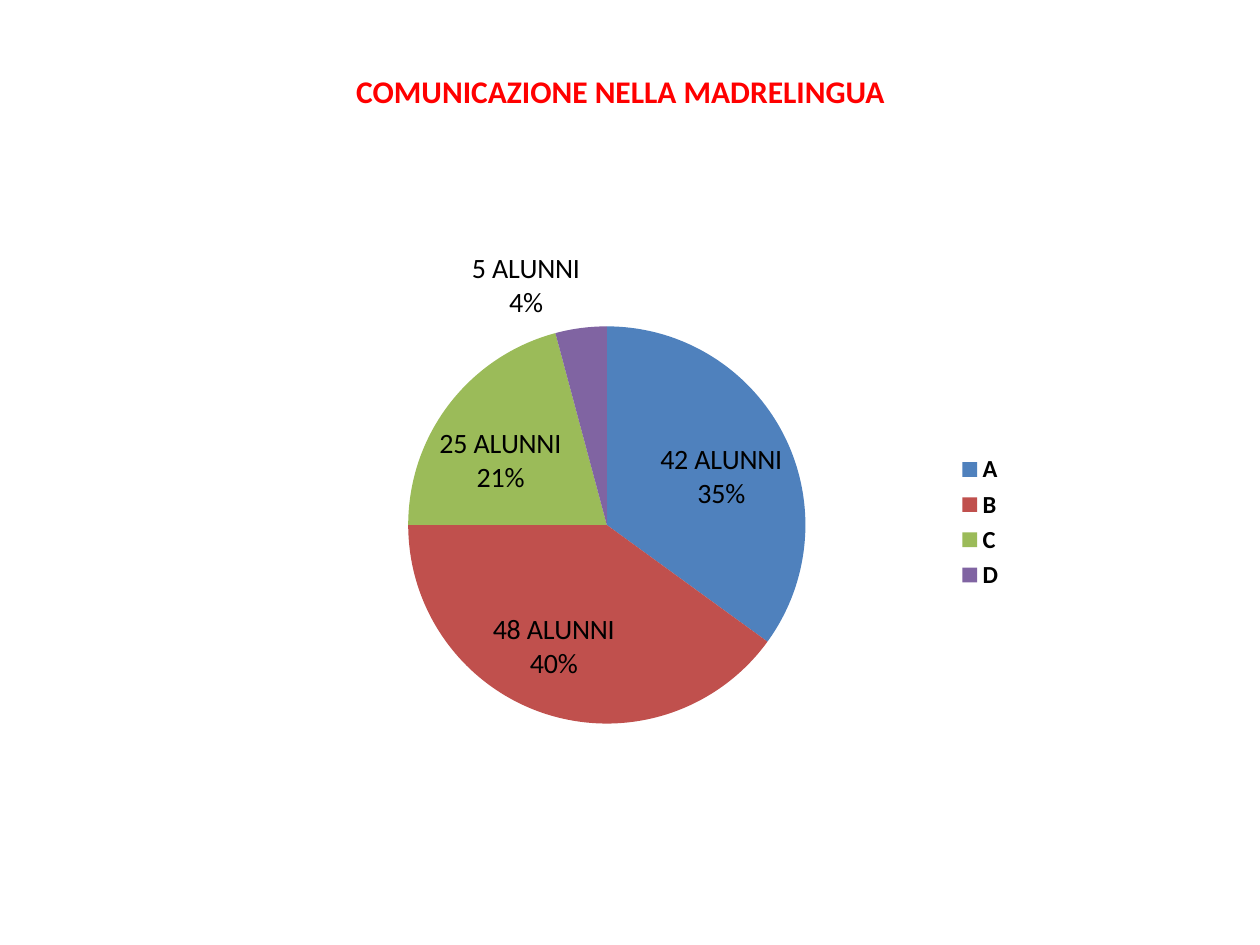
from lxml.etree import SubElement
from pptx import Presentation
from pptx.chart.data import CategoryChartData
from pptx.dml.color import RGBColor
from pptx.enum.chart import XL_CHART_TYPE, XL_LABEL_POSITION, XL_LEGEND_POSITION
from pptx.enum.text import MSO_ANCHOR, PP_ALIGN
from pptx.oxml.ns import qn
from pptx.util import Inches, Pt

COLORS = {"heading": "FF0000", "text": "000000",
          "A": "4F81BD", "B": "C0504D", "C": "9BBB59", "D": "8064A2"}
PUPILS = {"A": 42, "B": 48, "C": 25, "D": 5}
PIE_AREA = {"x": 0.24, "y": 0.16, "w": 0.5, "h": 0.69}


def style_font(font, size, color="text", bold=False):
    font.name, font.size, font.bold = "Calibri", Pt(size), bold
    font.color.rgb = RGBColor.from_string(COLORS[color])


def write(frame, text, size, color="text", bold=False, align=PP_ALIGN.CENTER):
    frame.text = text
    for paragraph in frame.paragraphs:
        paragraph.alignment = align
        style_font(paragraph.runs[0].font, size, color, bold)


class SlideBuilder:
    """Hold the slide and add its styled elements."""

    def __init__(self, deck):
        self.slide = deck.slides.add_slide(deck.slide_layouts[5])

    def heading(self, text, left, top, width, height):
        title = self.slide.shapes.title
        title.left, title.top = Inches(left), Inches(top)
        title.width, title.height = Inches(width), Inches(height)
        title.text_frame.vertical_anchor = MSO_ANCHOR.MIDDLE
        write(title.text_frame, text, size=18, color="heading", bold=True)

    def pie(self, counts, left, top, width, height):
        data = CategoryChartData()
        data.categories = list(counts)
        data.add_series("Series 1", list(counts.values()))
        chart = self.slide.shapes.add_chart(
            XL_CHART_TYPE.PIE, Inches(left), Inches(top),
            Inches(width), Inches(height), data).chart
        chart.has_title = False
        style_font(chart.font, 10)
        chart.has_legend = True
        chart.legend.position = XL_LEGEND_POSITION.RIGHT
        chart.legend.include_in_layout = False
        style_font(chart.legend.font, 14, bold=True)
        plot = chart.plots[0]
        plot.vary_by_categories = True
        self.place_pie(chart)
        labels = plot.series[0].data_labels
        labels.show_value = labels.show_percentage = True
        style_font(labels.font, 16)
        total = sum(counts.values())
        for index, (category, count) in enumerate(counts.items()):
            point = plot.series[0].points[index]
            point.format.fill.solid()
            point.format.fill.fore_color.rgb = RGBColor.from_string(COLORS[category])
            label = point.data_label
            write(label.text_frame, f"{count} ALUNNI\n{count / total:.0%}", size=16)
            label.position = XL_LABEL_POSITION.BEST_FIT

    def place_pie(self, chart):
        plot_area = chart.plots[0]._element.getparent()
        layout = plot_area.find(qn("c:layout"))
        if layout is None:
            layout = SubElement(plot_area, qn("c:layout"))
            plot_area.insert(0, layout)
        manual = SubElement(layout, qn("c:manualLayout"))
        settings = {"layoutTarget": "inner", "xMode": "edge", "yMode": "edge", **PIE_AREA}
        for tag, value in settings.items():
            SubElement(manual, qn(f"c:{tag}")).set("val", str(value))


def main():
    deck = Presentation()
    deck.slide_width, deck.slide_height = Inches(10), Inches(7.5)
    builder = SlideBuilder(deck)
    builder.heading("COMUNICAZIONE NELLA MADRELINGUA", 2.17, 0.52, 5.51, 0.4)
    builder.pie(PUPILS, 1.69, 1.86, 6.38, 4.57)
    deck.save("out.pptx")


if __name__ == "__main__":
    main()
